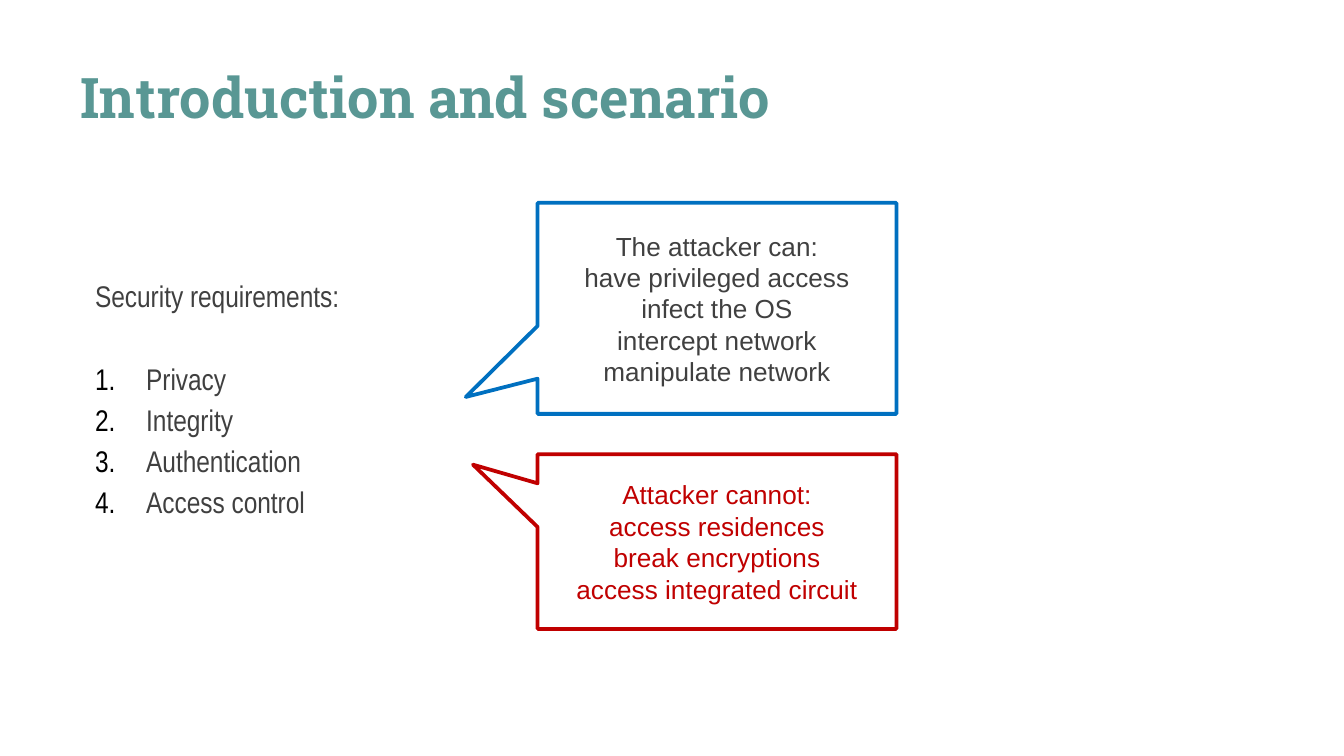
from lxml import etree
from pptx import Presentation
from pptx.dml.color import RGBColor
from pptx.enum.shapes import MSO_SHAPE
from pptx.enum.text import MSO_ANCHOR, PP_ALIGN
from pptx.oxml.ns import qn
from pptx.util import Inches, Pt

CALLOUT = MSO_SHAPE.RECTANGULAR_CALLOUT
MIDDLE = MSO_ANCHOR.MIDDLE
CENTER = PP_ALIGN.CENTER

COLORS = {
    "title": "599794",
    "text": "404040",
    "number": "000000",
    "can": "0070C0",
    "cannot": "C00000",
    "fill": "FFFFFF",
}

REQUIREMENTS = ["Privacy", "Integrity", "Authentication", "Access control"]
CAN = ["The attacker can:", "have privileged access", "infect the OS",
       "intercept network", "manipulate network"]
CANNOT = ["Attacker cannot:", "access residences", "break encryptions",
          "access integrated circuit"]


def rgb(name):
    return RGBColor.from_string(COLORS[name])


def add_run(p, text, font, size, color, bold=False):
    r = p.add_run()
    r.text = text
    r.font.name = font
    r.font.size = Pt(size)
    r.font.bold = bold
    r.font.color.rgb = rgb(color)


def next_paragraph(tf, index):
    return tf.add_paragraph() if index else tf.paragraphs[0]


def add_box(s, left, top, width, height):
    tf = s.shapes.add_textbox(Inches(left), Inches(top),
                              Inches(width), Inches(height)).text_frame
    tf.word_wrap = True
    tf.margin_left = tf.margin_right = Inches(0.1)
    tf.margin_top = tf.margin_bottom = Inches(0.1)
    return tf


def number_paragraph(p):
    pPr = p._p.get_or_add_pPr()
    pPr.set("marL", str(Inches(0.38)))
    pPr.set("indent", str(-Inches(0.38)))
    clr = etree.SubElement(pPr, qn("a:buClr"))
    etree.SubElement(clr, qn("a:srgbClr"), val=COLORS["number"])
    etree.SubElement(pPr, qn("a:buFont"), typeface="Arial Narrow")
    etree.SubElement(pPr, qn("a:buAutoNum"), type="arabicPeriod")


def add_title(s, text):
    tf = add_box(s, 0.5, 0.36, 9.32, 0.71)
    tf.vertical_anchor = MIDDLE
    add_run(tf.paragraphs[0], text, "Roboto Slab", 30, "title", bold=True)


def add_numbered_list(s, heading, items):
    tf = add_box(s, 0.61, 1.93, 8.77, 2.1)
    for i, text in enumerate([heading] + items):
        p = next_paragraph(tf, i)
        if i:
            number_paragraph(p)
        if i == 1:
            p.space_before = Pt(22)
        p.line_spacing = 1.15
        add_run(p, text, "Arial Narrow", 16, "text")


def add_callout(s, top, height, tip, lines, line_color, text_color):
    sp = s.shapes.add_shape(CALLOUT, Inches(4), Inches(top),
                            Inches(2.67), Inches(height))
    sp.adjustments[0], sp.adjustments[1] = tip
    sp.shadow.inherit = False
    sp.fill.solid()
    sp.fill.fore_color.rgb = rgb("fill")
    sp.line.color.rgb = rgb(line_color)
    sp.line.width = Pt(2)
    etree.SubElement(sp.line._get_or_add_ln(), qn("a:round"))
    tf = sp.text_frame
    tf.word_wrap = True
    tf.vertical_anchor = MIDDLE
    for i, text in enumerate(lines):
        p = next_paragraph(tf, i)
        p.alignment = CENTER
        add_run(p, text, "Arial", 14, text_color)


def main():
    prs = Presentation()
    prs.slide_width = Inches(10)
    prs.slide_height = prs.slide_width * 9 // 16
    s = prs.slides.add_slide(prs.slide_layouts[6])
    add_title(s, "Introduction and scenario")
    add_numbered_list(s, "Security requirements:", REQUIREMENTS)
    add_callout(s, 1.51, 1.57, (-0.7, 0.42), CAN, "can", "text")
    add_callout(s, 3.38, 1.3, (-0.68, -0.44), CANNOT, "cannot", "cannot")
    prs.save("out.pptx")


if __name__ == "__main__":
    main()
